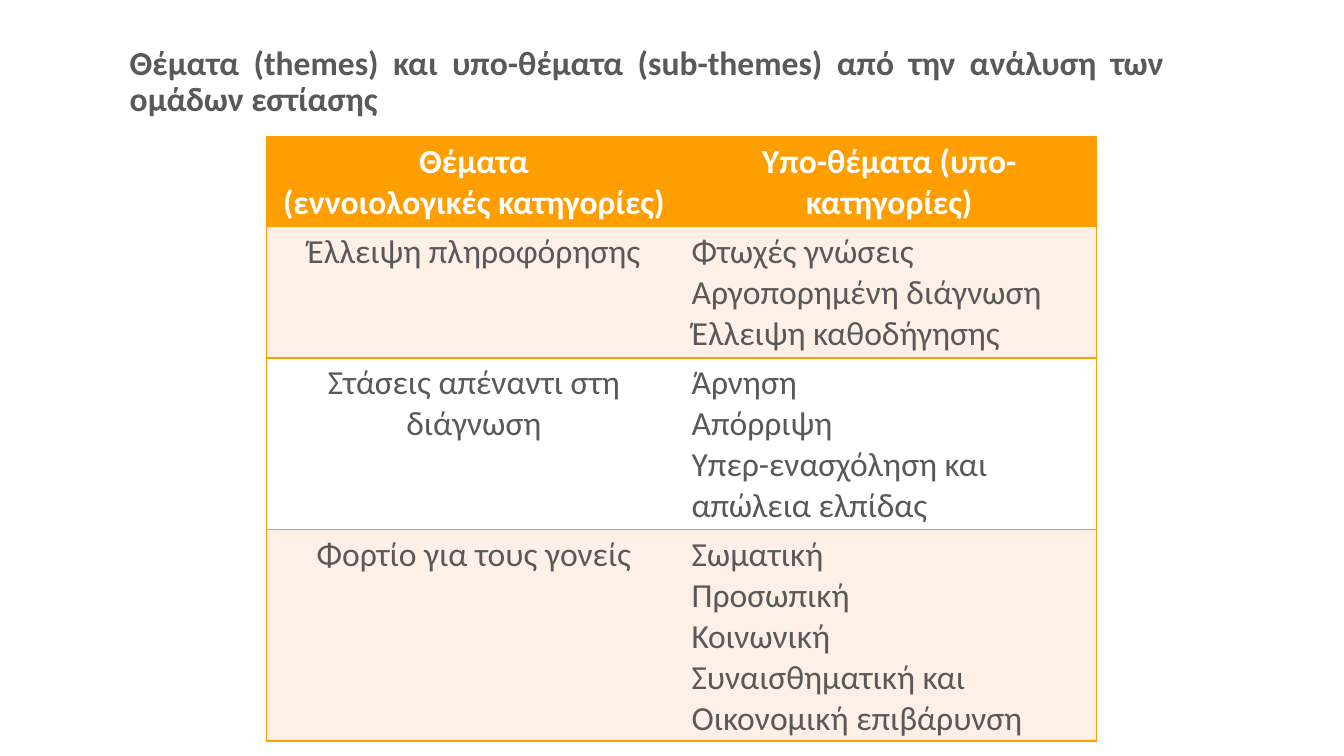
import dataclasses
import pptx
import pptx.util
import pptx.dml.color
import pptx.enum.text
import pptx.oxml.ns
from lxml import etree

Cm = pptx.util.Cm
Align = pptx.enum.text.PP_ALIGN


@dataclasses.dataclass(frozen=True)
class Theme:
    font: str = "Calibri"
    size: int = 24
    rule: int = 1
    ink: str = "595959"
    white: str = "FFFFFF"
    head: str = "FE9E00"
    band: str = "FFF0E7"


THEME = Theme()

TITLE = "Θέματα (themes) και υπο-θέματα (sub-themes) από την ανάλυση των ομάδων εστίασης"

ROWS = [
    (["Θέματα", "(εννοιολογικές κατηγορίες)"], ["Υπο-θέματα (υπο-κατηγορίες)"]),
    (["Έλλειψη πληροφόρησης"],
     ["Φτωχές γνώσεις", "Αργοπορημένη διάγνωση", "Έλλειψη καθοδήγησης"]),
    (["Στάσεις απέναντι στη διάγνωση"],
     ["Άρνηση", "Απόρριψη", "Υπερ-ενασχόληση και απώλεια ελπίδας"]),
    (["Φορτίο για τους γονείς"],
     ["Σωματική", "Προσωπική", "Κοινωνική", "Συναισθηματική και",
      "Οικονομική επιβάρυνση"]),
]
HEIGHTS = [2.06, 3, 3.91, 4.83]


def color(code):
    return pptx.dml.color.RGBColor.from_string(code)


def write(frame, lines, ink, bold, align):
    for i, line in enumerate(lines):
        para = frame.paragraphs[0] if i == 0 else frame.add_paragraph()
        para.text = line
        para.alignment = align
        para.font.name = THEME.font
        para.font.size = pptx.util.Pt(THEME.size)
        para.font.bold = bold
        para.font.color.rgb = color(ink)


def border(cell, inner):
    qn = pptx.oxml.ns.qn
    props = cell._tc.get_or_add_tcPr()
    for side in ("lnL", "lnR", "lnT", "lnB"):
        line = etree.SubElement(props, qn("a:" + side))
        if side == inner:
            line.set("w", "0")
            etree.SubElement(line, qn("a:noFill"))
        else:
            line.set("w", str(pptx.util.Pt(THEME.rule)))
            fill = etree.SubElement(line, qn("a:solidFill"))
            etree.SubElement(fill, qn("a:srgbClr"), val=THEME.head)


def add_title(slide, left, top, width, height):
    box = slide.shapes.add_textbox(Cm(left), Cm(top), Cm(width), Cm(height))
    frame = box.text_frame
    frame.word_wrap = True
    frame.vertical_anchor = pptx.enum.text.MSO_ANCHOR.BOTTOM
    write(frame, [TITLE], THEME.ink, True, Align.JUSTIFY)
    frame.paragraphs[0].line_spacing = 0.9


def add_themes(slide, left, top, width, height):
    shape = slide.shapes.add_table(
        len(ROWS), 2, Cm(left), Cm(top), Cm(width), Cm(height))
    table = shape.table
    for r, row in enumerate(ROWS):
        table.rows[r].height = Cm(height * HEIGHTS[r] / sum(HEIGHTS))
        head = r == 0
        fill = THEME.head if head else THEME.band if r % 2 else THEME.white
        for c, lines in enumerate(row):
            cell = table.cell(r, c)
            border(cell, "lnL" if c else "lnR")
            cell.fill.solid()
            cell.fill.fore_color.rgb = color(fill)
            align = Align.CENTER if head or c == 0 else Align.LEFT
            ink = THEME.white if head else THEME.ink
            write(cell.text_frame, lines, ink, head, align)


def main():
    deck = pptx.Presentation()
    deck.slide_width = Cm(33.87)
    deck.slide_height = Cm(19.05)
    slide = deck.slides.add_slide(deck.slide_layouts[6])
    add_title(slide, 3.02, 0.66, 26.57, 2.46)
    add_themes(slide, 6.71, 3.43, 20.93, sum(HEIGHTS))
    deck.save("out.pptx")


if __name__ == "__main__":
    main()
